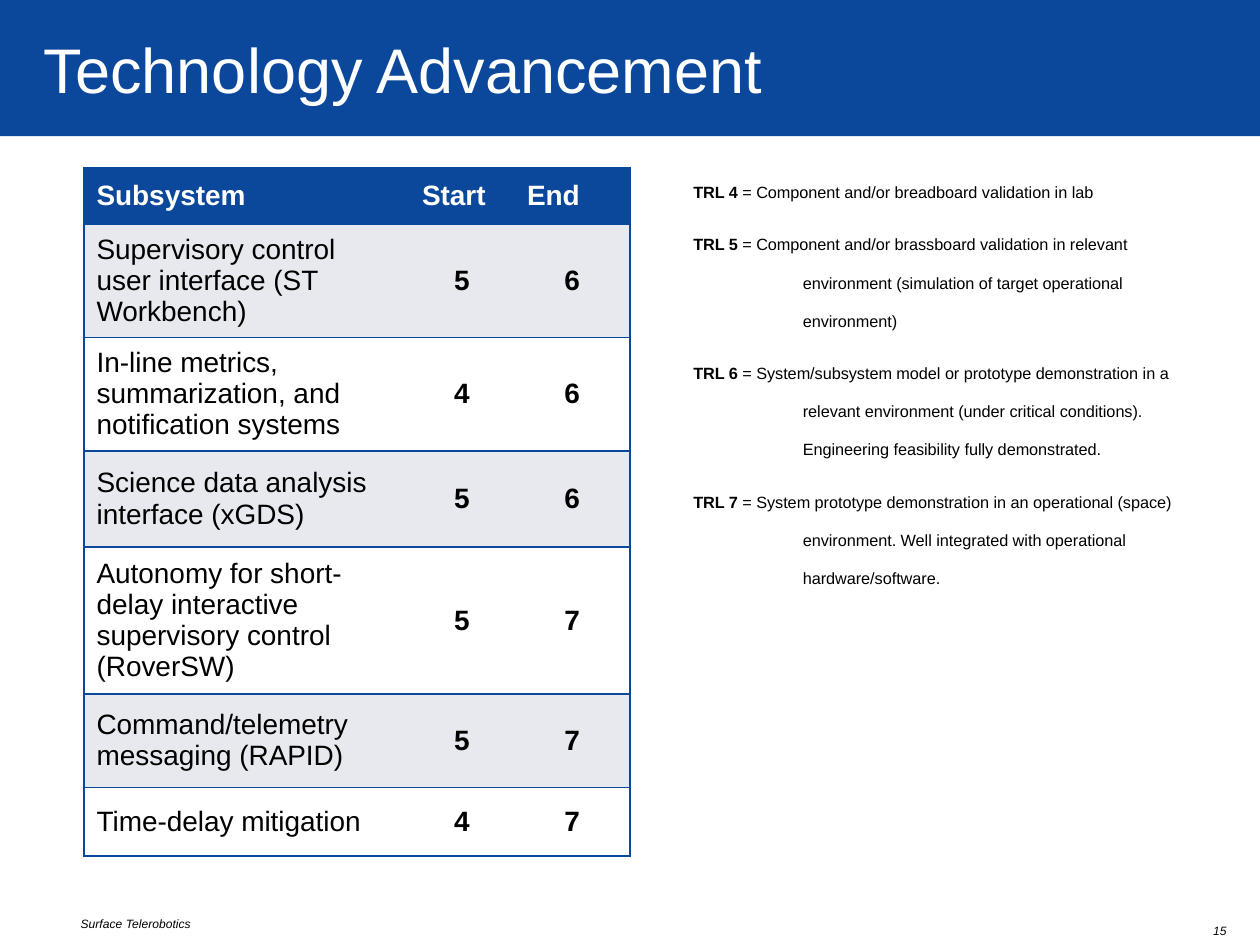
from dataclasses import dataclass

from lxml.etree import SubElement
from pptx import Presentation
from pptx.dml.color import RGBColor
from pptx.enum.shapes import MSO_SHAPE
from pptx.enum.text import MSO_ANCHOR, PP_ALIGN
from pptx.oxml.ns import qn
from pptx.util import Pt


@dataclass(frozen=True)
class Theme:
    font: str = "Arial"
    blue: str = "0B489C"
    band: str = "E7E9EF"
    white: str = "FFFFFF"
    black: str = "000000"
    title: int = 36
    body: int = 16
    footer: int = 12
    border: int = 1
    subscript: int = -25000


class SlideBuilder:
    def __init__(self, slide, theme):
        self.slide = slide
        self.theme = theme

    def add_span(self, para, text, size, color, bold=False, italic=False, lowered=False):
        span = para.add_run()
        span.text = text
        font = span.font
        font.name, font.size = self.theme.font, Pt(size)
        font.bold, font.italic = bold, italic
        font.color.rgb = RGBColor.from_string(color)
        if lowered:
            span._r.get_or_add_rPr().set("baseline", str(self.theme.subscript))

    def bar(self, left, top, width, height):
        shape = self.slide.shapes.add_shape(
            MSO_SHAPE.RECTANGLE, Pt(left), Pt(top), Pt(width), Pt(height))
        shape.shadow.inherit = False
        shape.fill.solid()
        shape.fill.fore_color.rgb = RGBColor.from_string(self.theme.blue)
        shape.line.fill.background()

    def text_frame(self, left, top, width, height, anchor=MSO_ANCHOR.TOP):
        box = self.slide.shapes.add_textbox(Pt(left), Pt(top), Pt(width), Pt(height))
        frame = box.text_frame
        frame.word_wrap = True
        frame.vertical_anchor = anchor
        return frame

    def title(self, text, *place):
        para = self.text_frame(*place, anchor=MSO_ANCHOR.MIDDLE).paragraphs[0]
        self.add_span(para, text, self.theme.title, self.theme.white)

    def footer(self, text, align, *place):
        para = self.text_frame(*place).paragraphs[0]
        para.alignment = align
        self.add_span(para, text, self.theme.footer, self.theme.black,
                      italic=True, lowered=True)

    def definitions(self, entries, *place):
        frame = self.text_frame(*place)
        for index, (term, meaning) in enumerate(entries):
            para = frame.add_paragraph() if index else frame.paragraphs[0]
            if index:
                para.space_before = Pt(8)
            properties = para._p.get_or_add_pPr()
            properties.set("marL", str(Pt(67.7)))
            properties.set("indent", str(Pt(-62.6)))
            for text, bold in ((f"{term} ", True), (f"= {meaning}", False)):
                self.add_span(para, text, self.theme.body, self.theme.black,
                              bold=bold, lowered=True)

    def cell_borders(self, cell, visible):
        properties = cell._tc.get_or_add_tcPr()
        for side in "LRTB":
            line = SubElement(properties, qn(f"a:ln{side}"))
            if side in visible:
                line.set("w", str(Pt(self.theme.border)))
                fill = SubElement(line, qn("a:solidFill"))
                SubElement(fill, qn("a:srgbClr")).set("val", self.theme.blue)
            else:
                SubElement(line, qn("a:noFill"))

    def table(self, rows, widths, heights, left, top):
        theme = self.theme
        table = self.slide.shapes.add_table(
            len(rows), len(widths), Pt(left), Pt(top),
            Pt(sum(widths)), Pt(sum(heights))).table
        table.first_row = table.horz_banding = False
        for column, width in zip(table.columns, widths):
            column.width = Pt(width)
        last = len(widths) - 1
        for r, (values, height) in enumerate(zip(rows, heights)):
            table.rows[r].height = Pt(height)
            header = r == 0
            fill = theme.blue if header else (theme.band if r % 2 else theme.white)
            for c, value in enumerate(values):
                cell = table.cell(r, c)
                self.cell_borders(cell, "TB" + "L" * (c == 0) + "R" * (c == last))
                cell.fill.solid()
                cell.fill.fore_color.rgb = RGBColor.from_string(fill)
                cell.vertical_anchor = MSO_ANCHOR.MIDDLE
                para = cell.text_frame.paragraphs[0]
                if c and not header:
                    para.alignment = PP_ALIGN.CENTER
                self.add_span(para, value, theme.body,
                              theme.white if header else theme.black,
                              bold=header or c > 0)


def main():
    deck = Presentation()
    deck.slide_width, deck.slide_height = Pt(720), Pt(540)
    page = SlideBuilder(deck.slides.add_slide(deck.slide_layouts[6]), Theme())

    # Title band and footer
    page.bar(0, 0, 720, 77.8)
    page.footer("15", PP_ALIGN.RIGHT, 558, 516, 150, 18)
    page.footer("Surface Telerobotics", PP_ALIGN.JUSTIFY, 39, 512, 360, 18)
    page.title("Technology Advancement", 18, 12, 702, 54)

    # Readiness level of each subsystem
    page.table(
        [
            ("Subsystem", "Start", "End"),
            ("Supervisory control user interface (ST Workbench)", "5", "6"),
            ("In-line metrics, summarization, and notification systems", "4", "6"),
            ("Science data analysis interface (xGDS)", "5", "6"),
            ("Autonomy for short-delay interactive supervisory control (RoverSW)", "5", "7"),
            ("Command/telemetry messaging (RAPID)", "5", "7"),
            ("Time-delay mitigation", "4", "7"),
        ],
        widths=(186, 60, 66),
        heights=(32, 60.5, 60.5, 55, 78.5, 53.3, 39.4),
        left=48, top=96)

    # Meaning of the levels
    page.definitions(
        [
            ("TRL 4", "Component and/or breadboard validation in lab"),
            ("TRL 5", "Component and/or brassboard validation in relevant environment "
                      "(simulation of target operational environment)"),
            ("TRL 6", "System/subsystem model or prototype demonstration in a relevant "
                      "environment (under critical conditions). Engineering feasibility "
                      "fully demonstrated."),
            ("TRL 7", "System prototype demonstration in an operational (space) "
                      "environment. Well integrated with operational hardware/software."),
        ],
        384, 90, 294, 384)

    deck.save("out.pptx")


if __name__ == "__main__":
    main()
